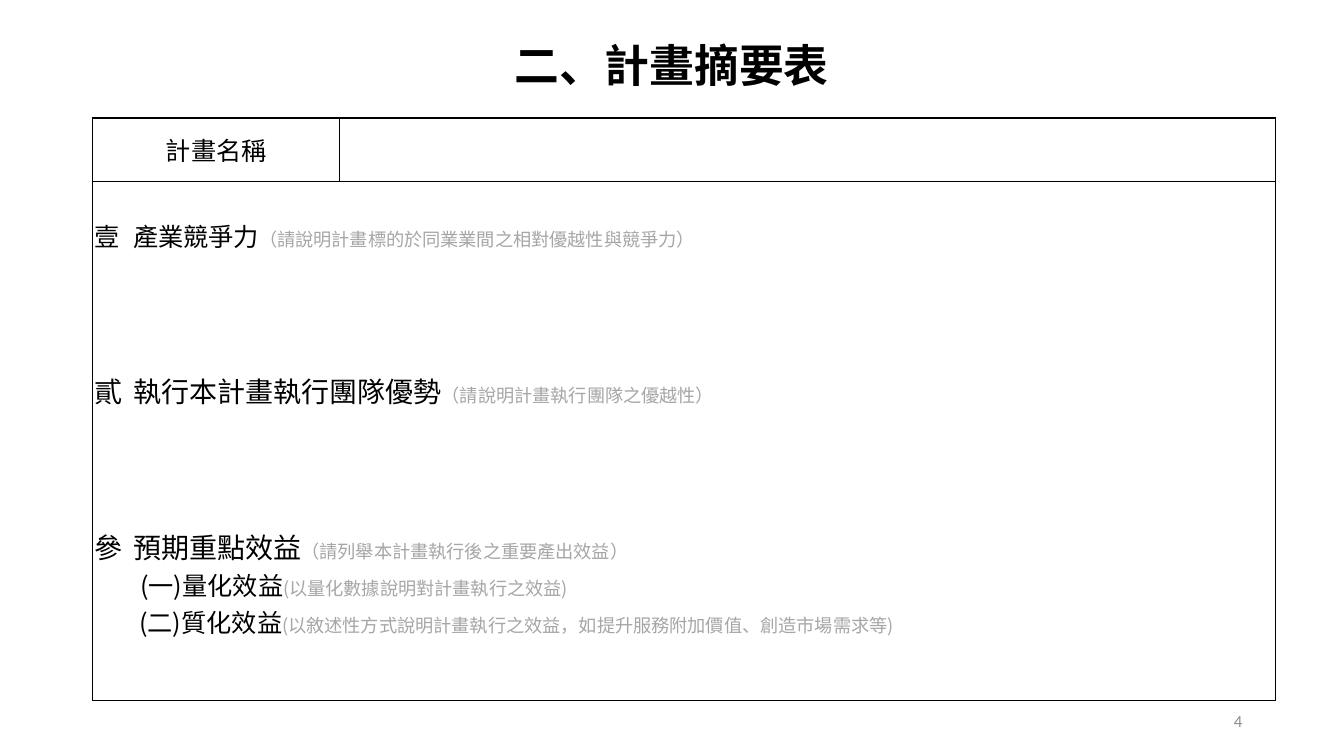
from dataclasses import dataclass

from lxml.etree import SubElement
from pptx import Presentation
from pptx.dml.color import RGBColor
from pptx.enum.text import MSO_ANCHOR as Anchor, MSO_AUTO_SIZE as AutoSize, PP_ALIGN as Align
from pptx.oxml.ns import qn
from pptx.util import Inches, Pt


@dataclass(frozen=True)
class Theme:
    cjk_font: str = "Noto Sans CJK SC"
    latin_font: str = "Calibri"
    ink: str = "000000"
    hint: str = "A6A6A6"
    page: str = "8C8C8C"
    title_size: float = 32
    heading_size: float = 20
    text_size: float = 18
    hint_size: float = 13
    page_size: float = 12
    border_width: float = 1


@dataclass(frozen=True)
class SummaryItem:
    label: str
    hint: str
    size: float
    left: float
    hanging: float = 0
    space_before: float = 0
    numbered: bool = False


THEME = Theme()
SECTION_GAP = 82.5
NUMBER_INDENT = 0.38

ITEMS = [
    SummaryItem("產業競爭力", "（請說明計畫標的於同業業間之相對優越性與競爭力）",
                THEME.text_size, NUMBER_INDENT, NUMBER_INDENT, numbered=True),
    SummaryItem("執行本計畫執行團隊優勢", "（請說明計畫執行團隊之優越性）",
                THEME.heading_size, NUMBER_INDENT, NUMBER_INDENT, SECTION_GAP, True),
    SummaryItem("預期重點效益", "（請列舉本計畫執行後之重要產出效益）",
                THEME.heading_size, NUMBER_INDENT, NUMBER_INDENT, SECTION_GAP, True),
    SummaryItem("(一)量化效益", "(以量化數據說明對計畫執行之效益)", THEME.text_size, 0.45),
    SummaryItem("(二)質化效益",
                "(以敘述性方式說明計畫執行之效益，如提升服務附加價值、創造市場需求等)",
                THEME.text_size, 0.44),
]


def add_text(paragraph, text: str, *, size: float, color: str = THEME.ink,
             font: str = THEME.cjk_font, bold: bool = False) -> None:
    run = paragraph.add_run()
    run.text = text
    run.font.size = Pt(size)
    run.font.bold = bold
    run.font.name = font
    run.font.color.rgb = RGBColor.from_string(color)
    SubElement(run.font._element, qn("a:ea"), typeface=font)


def add_item(paragraph, item: SummaryItem) -> None:
    paragraph.alignment = Align.JUSTIFY
    paragraph.space_before = Pt(item.space_before)
    properties = paragraph._p.get_or_add_pPr()
    properties.set("marL", str(Inches(item.left)))
    properties.set("indent", str(-Inches(item.hanging)))
    if item.numbered:
        SubElement(properties, qn("a:buFont"), typeface=THEME.cjk_font)
        SubElement(properties, qn("a:buAutoNum"), type="ea1ChtPlain")
    add_text(paragraph, item.label, size=item.size)
    add_text(paragraph, item.hint, size=THEME.hint_size, color=THEME.hint)


def format_cell(cell) -> None:
    cell.margin_left = cell.margin_right = Inches(0.02)
    cell.margin_top = cell.margin_bottom = 0
    properties = cell._tc.get_or_add_tcPr()
    for side in ("lnL", "lnR", "lnT", "lnB"):
        line = SubElement(properties, qn(f"a:{side}"), w=str(Pt(THEME.border_width)))
        fill = SubElement(line, qn("a:solidFill"))
        SubElement(fill, qn("a:srgbClr"), val=THEME.ink)
    cell.fill.background()


def add_title(slide) -> None:
    title = slide.shapes.title
    title.left, title.top = Inches(0.45), 0
    title.width, title.height = Inches(12.43), Inches(1.22)
    frame = title.text_frame
    frame.auto_size = AutoSize.NONE
    frame.vertical_anchor = Anchor.MIDDLE
    paragraph = frame.paragraphs[0]
    paragraph.alignment = Align.CENTER
    paragraph.line_spacing = 1.1
    add_text(paragraph, "二、計畫摘要表", size=THEME.title_size, bold=True)


def add_summary_table(slide) -> None:
    column_widths, row_heights = (2.45, 9.28), (0.63, 5.15)
    table = slide.shapes.add_table(
        len(row_heights), len(column_widths), Inches(0.92), Inches(1.17),
        Inches(sum(column_widths)), Inches(sum(row_heights))).table
    table.first_row = table.horz_banding = False
    for column, width in zip(table.columns, column_widths):
        column.width = Inches(width)
    for row, height in zip(table.rows, row_heights):
        row.height = Inches(height)
        for cell in row.cells:
            format_cell(cell)

    # Project name row
    name_cell = table.cell(0, 0)
    name_cell.vertical_anchor = Anchor.MIDDLE
    paragraph = name_cell.text_frame.paragraphs[0]
    paragraph.alignment = Align.CENTER
    add_text(paragraph, "計畫名稱", size=THEME.text_size)

    # Summary row
    summary_cell = table.cell(1, 0)
    summary_cell.merge(table.cell(1, 1))
    summary_cell.margin_top = Inches(0.36)
    frame = summary_cell.text_frame
    for index, item in enumerate(ITEMS):
        add_item(frame.add_paragraph() if index else frame.paragraphs[0], item)


def add_page_number(slide) -> None:
    box = slide.shapes.add_textbox(Inches(9.42), Inches(6.95), Inches(3), Inches(0.4))
    frame = box.text_frame
    frame.word_wrap = True
    frame.vertical_anchor = Anchor.MIDDLE
    paragraph = frame.paragraphs[0]
    paragraph.alignment = Align.RIGHT
    add_text(paragraph, "4", size=THEME.page_size, color=THEME.page, font=THEME.latin_font)


def main() -> None:
    presentation = Presentation()
    presentation.slide_width, presentation.slide_height = Inches(13.33), Inches(7.5)
    title_only = presentation.slide_layouts[5]
    slide = presentation.slides.add_slide(title_only)
    add_title(slide)
    add_page_number(slide)
    add_summary_table(slide)
    presentation.save("out.pptx")


if __name__ == "__main__":
    main()
